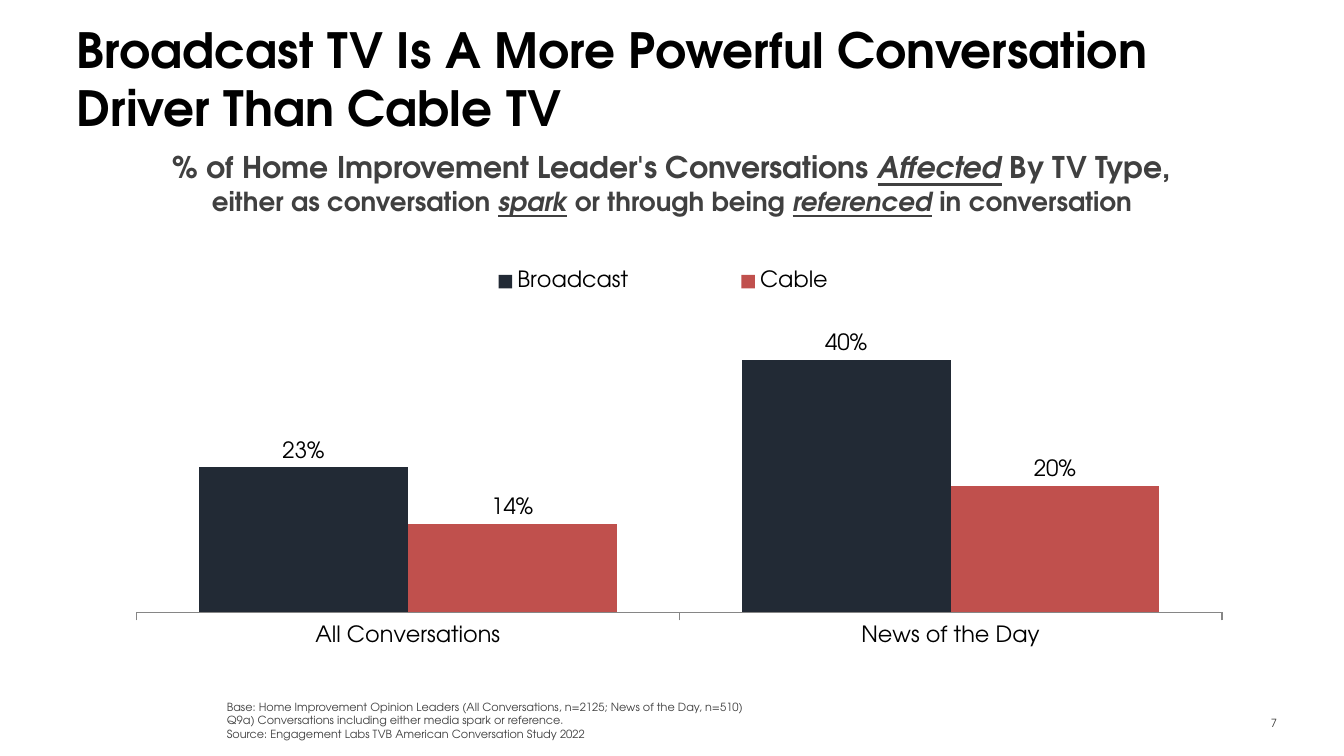
from lxml.etree import SubElement
from pptx import Presentation
from pptx.chart.data import CategoryChartData
from pptx.dml.color import RGBColor
from pptx.enum.chart import XL_CHART_TYPE as ChartType
from pptx.enum.chart import XL_LABEL_POSITION as LabelPosition
from pptx.enum.chart import XL_LEGEND_POSITION as LegendPosition
from pptx.enum.chart import XL_TICK_MARK as TickMark
from pptx.enum.text import MSO_ANCHOR as Anchor
from pptx.enum.text import MSO_AUTO_SIZE as AutoSize
from pptx.enum.text import PP_ALIGN as Align
from pptx.oxml.ns import qn
from pptx.util import Inches, Pt

FONT = "TeX Gyre Adventor"
COLORS = {
    "black": "000000",
    "text": "404040",
    "number": "3C3C3A",
    "axis": "868686",
    "broadcast": "222A35",
    "cable": "C0504D",
}


def rgb(name):
    return RGBColor.from_string(COLORS[name])


def style_font(font, size, color, bold=False):
    font.name = FONT
    font.size = Pt(size)
    font.bold = bold
    font.color.rgb = rgb(color)


def add_run(paragraph, text, size, color, bold=False, emphasis=""):
    """Add a run; emphasis may hold "i" for italic and "u" for underline."""
    run = paragraph.add_run()
    run.text = text
    style_font(run.font, size, color, bold)
    if "i" in emphasis:
        run.font.italic = True
    if "u" in emphasis:
        run.font.underline = True


def add_text_box(slide, left, top, width, height, anchor=Anchor.TOP, wrap=True):
    box = slide.shapes.add_textbox(
        Inches(left), Inches(top), Inches(width), Inches(height))
    frame = box.text_frame
    frame.word_wrap = wrap
    frame.vertical_anchor = anchor
    return frame


def add_title(slide, text):
    title = slide.shapes.title
    title.left, title.top = Inches(0.47), Inches(0.15)
    title.width, title.height = Inches(9.06), Inches(0.9)
    frame = title.text_frame
    frame.auto_size = AutoSize.NONE
    frame.vertical_anchor = Anchor.TOP
    frame.margin_top = Inches(0)
    paragraph = frame.paragraphs[0]
    paragraph.alignment = Align.LEFT
    add_run(paragraph, text, 26, "black", bold=True)


def add_subtitle(slide):
    lines = [
        (16, [("% of Home Improvement Leader's Conversations ", ""),
              ("Affected", "iu"), (" By TV Type,", "")]),
        (14, [("either as conversation ", ""), ("spark", "iu"), (" ", "i"),
              ("or through being ", ""), ("referenced", "iu"), (" ", "i"),
              ("in conversation", "")]),
    ]
    frame = add_text_box(slide, 1.12, 1.06, 7.76, 0.61, wrap=False)
    for index, (size, runs) in enumerate(lines):
        paragraph = frame.add_paragraph() if index else frame.paragraphs[0]
        paragraph.alignment = Align.CENTER
        for text, emphasis in runs:
            add_run(paragraph, text, size, "text", True, emphasis)


def add_footnote(slide):
    frame = add_text_box(slide, 1.59, 5.16, 8.37, 0.4, Anchor.BOTTOM)
    base = frame.paragraphs[0]
    add_run(base, "Base: Home Improvement Opinion Leaders "
            "(All Conversations, n=2125; News of the Day, n=510)", 6, "text")
    base.add_line_break()
    add_run(base, "Q9a) Conversations including either media spark or reference.",
            6, "text")
    add_run(frame.add_paragraph(),
            "Source: Engagement Labs TVB American Conversation Study 2022", 6, "text")


def add_slide_number(slide, number):
    frame = add_text_box(slide, 9.04, 5.22, 0.59, 0.3, Anchor.MIDDLE)
    paragraph = frame.paragraphs[0]
    paragraph.alignment = Align.RIGHT
    add_run(paragraph, number, 6, "number")
    add_run(paragraph, " ", 8, "number")


def set_layout(element, x, y, width, height, inner=False):
    """Place a plot area or legend by fractions of the chart's size."""
    for old in element.findall(qn("c:layout")):
        element.remove(old)
    layout = SubElement(element, qn("c:layout"))
    manual = SubElement(layout, qn("c:manualLayout"))
    settings = [("layoutTarget", "inner")] if inner else []
    settings += [("xMode", "edge"), ("yMode", "edge"),
                 ("x", x), ("y", y), ("w", width), ("h", height)]
    for tag, value in settings:
        SubElement(manual, qn(f"c:{tag}")).set("val", str(value))
    element.insert(0 if inner else 1, layout)


def format_axes(chart):
    value_axis = chart.value_axis
    value_axis.minimum_scale, value_axis.maximum_scale = 0, 0.5
    value_axis.has_major_gridlines = False
    value_axis.visible = False
    category_axis = chart.category_axis
    category_axis.major_tick_mark = TickMark.OUTSIDE
    category_axis.format.line.color.rgb = rgb("axis")
    category_axis.format.line.width = Pt(0.75)
    style_font(category_axis.tick_labels.font, 12, "black")


def format_series(series, color):
    series.format.fill.solid()
    series.format.fill.fore_color.rgb = rgb(color)
    labels = series.data_labels
    labels.show_value = True
    labels.position = LabelPosition.OUTSIDE_END
    labels.number_format = "0%"
    labels.number_format_is_linked = False
    style_font(labels.font, 12, "black")


def add_conversation_chart(slide):
    data = CategoryChartData(number_format="0%")
    data.categories = ["All Conversations", "News of the Day"]
    data.add_series("Broadcast", (0.23, 0.40))
    data.add_series("Cable ", (0.14, 0.20))
    chart = slide.shapes.add_chart(
        ChartType.COLUMN_CLUSTERED, Inches(0.85), Inches(1.63),
        Inches(8.3), Inches(3.58), data).chart
    chart.has_title = False
    style_font(chart.font, 18, "black")
    format_axes(chart)

    plot = chart.plots[0]
    plot.gap_width = 60
    plot.overlap = 0
    plot.vary_by_categories = False
    for series, color in zip(plot.series, ("broadcast", "cable")):
        format_series(series, color)

    chart.has_legend = True
    legend = chart.legend
    legend.position = LegendPosition.TOP
    legend.include_in_layout = False
    style_font(legend.font, 12, "black")
    plot_area = chart.element.find(".//" + qn("c:plotArea"))
    set_layout(plot_area, 0.02, 0.163, 0.973, 0.655, inner=True)
    set_layout(chart.element.find(".//" + qn("c:legend")), 0.25, 0.08, 0.49, 0.1)


def main():
    presentation = Presentation()
    presentation.slide_width = Inches(10)
    presentation.slide_height = Inches(10) * 9 // 16
    slide = presentation.slides.add_slide(presentation.slide_layouts[5])
    add_slide_number(slide, "7")
    add_conversation_chart(slide)
    add_title(slide, "Broadcast TV Is A More Powerful Conversation "
                     "Driver Than Cable TV")
    add_subtitle(slide)
    add_footnote(slide)
    presentation.save("out.pptx")


if __name__ == "__main__":
    main()
